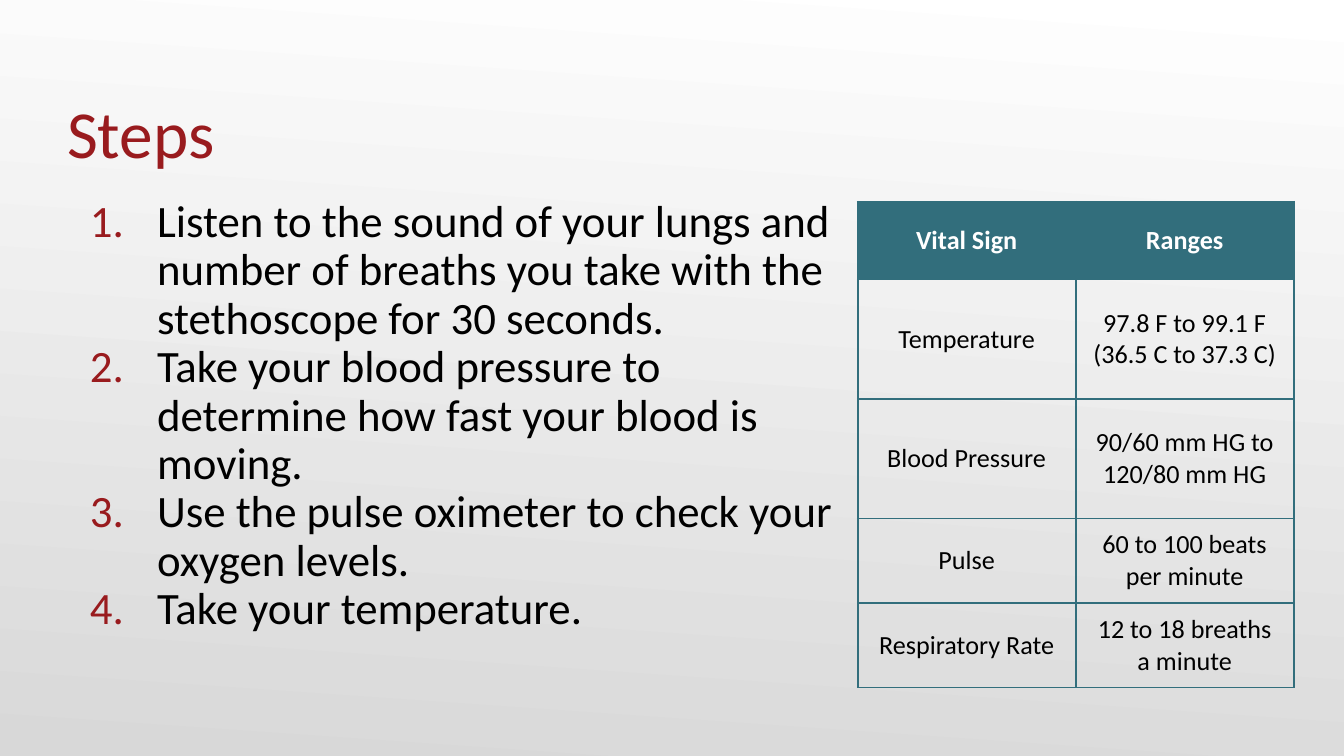
from lxml.etree import SubElement
from pptx import Presentation
from pptx.dml.color import RGBColor
from pptx.enum.text import MSO_ANCHOR, PP_ALIGN
from pptx.oxml.ns import qn
from pptx.util import Cm, Pt

TITLE = "Steps"
STEPS = [
    "Listen to the sound of your lungs and number of breaths you take with the stethoscope for 30 seconds.",
    "Take your blood pressure to determine how fast your blood is moving.",
    "Use the pulse oximeter to check your oxygen levels.",
    "Take your temperature.",
]
VITAL_SIGNS = [
    ("Vital Sign", "Ranges"),
    ("Temperature", "97.8 F to 99.1 F (36.5 C to 37.3 C)"),
    ("Blood Pressure", "90/60 mm HG to 120/80 mm HG"),
    ("Pulse", "60 to 100 beats per minute"),
    ("Respiratory Rate", "12 to 18 breaths a minute"),
]
ROW_HEIGHTS = [1.47, 2.26, 2.26, 1.6, 1.6]
COLUMN_WIDTH = 4.12

THEME = {
    "font": "Calibri",
    "title_size": 36,
    "step_size": 24,
    "table_size": 14,
    "accent": "991B1E",
    "teal": "326E7C",
    "text": "000000",
    "header_text": "FFFFFF",
    "background": ("FFFFFF", "D8D8D8"),
}


def set_font(paragraph, size, color, bold=False):
    font = paragraph.font
    font.name = THEME["font"]
    font.size = Pt(size)
    font.bold = bold
    font.color.rgb = RGBColor.from_string(color)


def add_text_box(page, place, margins, anchor):
    frame = page.shapes.add_textbox(*map(Cm, place)).text_frame
    frame.word_wrap = True
    frame.vertical_anchor = anchor
    frame.margin_left, frame.margin_top, frame.margin_right, frame.margin_bottom = map(Cm, margins)
    return frame


def add_number(paragraph):
    properties = paragraph._p.get_or_add_pPr()
    properties.set("marL", str(Cm(1.45)))
    properties.set("indent", str(Cm(-1.27)))
    color = SubElement(properties, qn("a:buClr"))
    SubElement(color, qn("a:srgbClr"), val=THEME["accent"])
    SubElement(properties, qn("a:buFont"), typeface="+mj-lt")
    SubElement(properties, qn("a:buAutoNum"), type="arabicPeriod")


def add_borders(cell):
    properties = cell._tc.get_or_add_tcPr()
    for side in ("lnL", "lnR", "lnT", "lnB"):
        line = SubElement(properties, qn(f"a:{side}"), w=str(Pt(1)))
        fill = SubElement(line, qn("a:solidFill"))
        SubElement(fill, qn("a:srgbClr"), val=THEME["teal"])


def paint_background(page):
    fill = page.background.fill
    fill.gradient()
    fill.gradient_angle = 266
    for stop, position, color in zip(fill.gradient_stops, (0, 1), THEME["background"]):
        stop.position = position
        stop.color.rgb = RGBColor.from_string(color)


def add_title(page):
    frame = add_text_box(page, (1.27, 0.86, 22.86, 2.39), (0, 0.13, 0, 0), MSO_ANCHOR.BOTTOM)
    para = frame.paragraphs[0]
    para.text = TITLE
    set_font(para, THEME["title_size"], THEME["accent"])


def add_steps(page):
    frame = add_text_box(page, (1.27, 3.63, 14.94, 9.55), (0.25, 0.13, 0.25, 0.13), MSO_ANCHOR.TOP)
    for index, step in enumerate(STEPS):
        para = frame.add_paragraph() if index else frame.paragraphs[0]
        para.text = step
        add_number(para)
        para.line_spacing = 0.9
        set_font(para, THEME["step_size"], THEME["text"])


def add_vital_signs(page):
    columns = len(VITAL_SIGNS[0])
    place = (16.21, 3.81, COLUMN_WIDTH * columns, sum(ROW_HEIGHTS))
    table = page.shapes.add_table(len(VITAL_SIGNS), columns, *map(Cm, place)).table
    table.horz_banding = False
    for row, height in zip(table.rows, ROW_HEIGHTS):
        row.height = Cm(height)
    for row_index, texts in enumerate(VITAL_SIGNS):
        header = row_index == 0
        for column_index, text in enumerate(texts):
            cell = table.cell(row_index, column_index)
            add_borders(cell)
            if header:
                cell.fill.solid()
                cell.fill.fore_color.rgb = RGBColor.from_string(THEME["teal"])
            else:
                cell.fill.background()
            cell.text = text
            cell.vertical_anchor = MSO_ANCHOR.MIDDLE
            para = cell.text_frame.paragraphs[0]
            para.alignment = PP_ALIGN.CENTER
            set_font(para, THEME["table_size"], THEME["header_text" if header else "text"], header)


def main():
    """Build the slide of numbered steps and vital sign ranges."""
    deck = Presentation()
    deck.slide_width, deck.slide_height = Cm(25.4), Cm(14.29)
    page = deck.slides.add_slide(deck.slide_layouts[6])
    paint_background(page)
    add_steps(page)
    add_title(page)
    add_vital_signs(page)
    deck.save("out.pptx")


if __name__ == "__main__":
    main()
